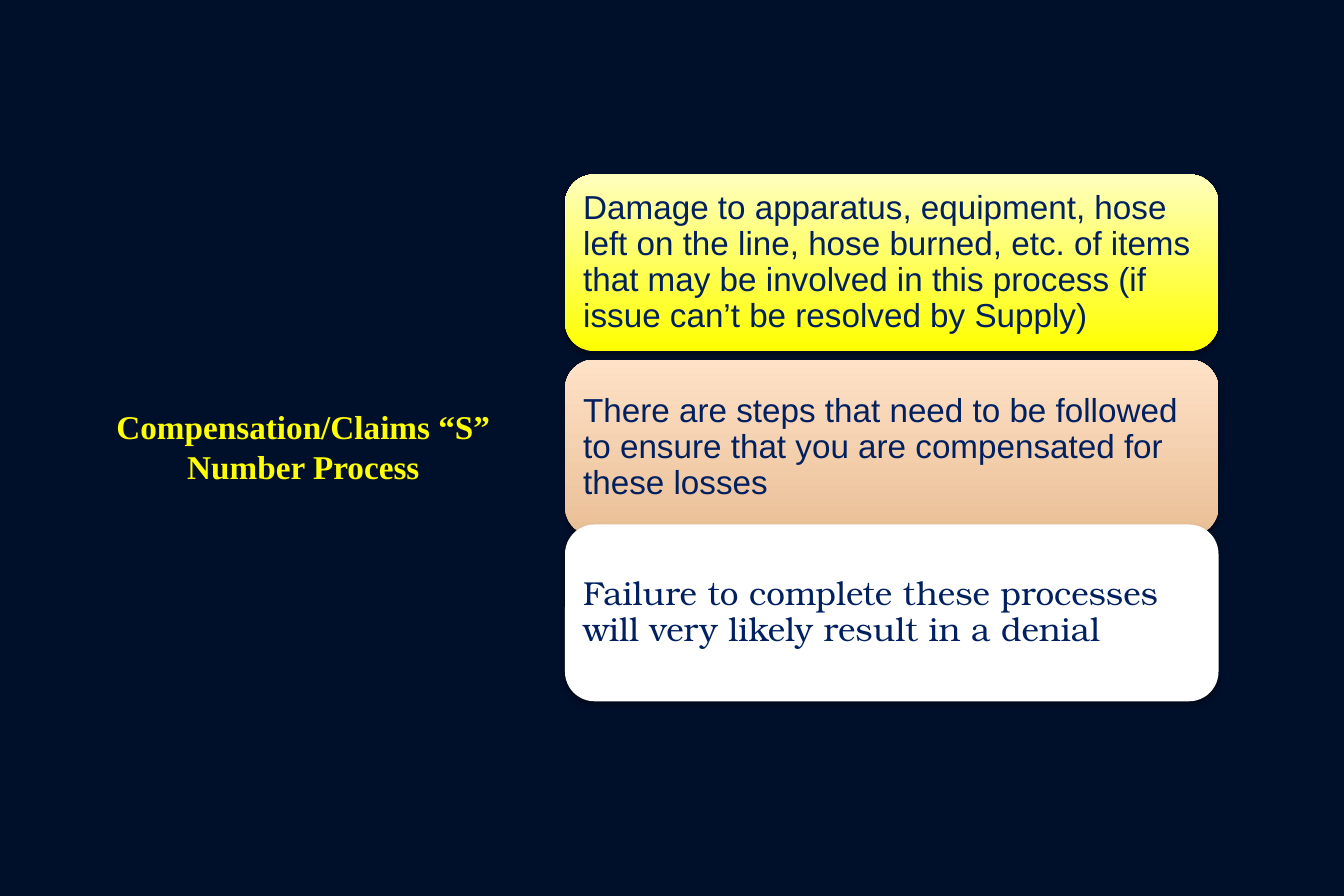
from lxml import etree
from pptx import Presentation
from pptx.dml.color import RGBColor
from pptx.enum import shapes, text
from pptx.oxml.ns import qn
from pptx.util import Pt

COLOURS = {
    "background": "000F2A",
    "title": "FFFF00",
    "body": "002060",
    "yellow": "FFFF00",
    "pale yellow": "FFFFBD",
    "tan": "E9BF96",
    "peach": "FFE1C7",
    "white": "FFFFFF",
    "shadow": "000000",
}
TITLE = "Compensation/Claims “S” Number Process"
# Text, font, top, fill colours from bottom to top
CARDS = [
    ("Damage to apparatus, equipment, hose left on the line, hose burned, etc. "
     "of items that may be involved in this process (if issue can’t be resolved by Supply)",
     "Arial", 105.12, ["yellow", "pale yellow"]),
    ("There are steps that need to be followed to ensure that you are "
     "compensated for these losses",
     "Arial", 216.72, ["tan", "peach"]),
    ("Failure to complete these processes will very likely result in a denial",
     "TeX Gyre Bonum", 316.08, ["white"]),
]
CARD_LEFT, CARD_WIDTH, CARD_HEIGHT = 340.56, 393.84, 106.56
CARD_INSET = 5.76
TEXT_SIZE = 20


def colour(name):
    return RGBColor.from_string(COLOURS[name])


def write(shape, words, font_name, colour_name, alignment, bold=False):
    frame = shape.text_frame
    frame.word_wrap = True
    frame.vertical_anchor = text.MSO_ANCHOR.MIDDLE
    frame.text = words
    paragraph = frame.paragraphs[0]
    paragraph.alignment = alignment
    font = paragraph.runs[0].font
    font.name, font.size, font.bold = font_name, Pt(TEXT_SIZE), bold
    font.color.rgb = colour(colour_name)


def paint(shape, names):
    """Fill with one colour, or with a gradient rising from the first to the second."""
    if len(names) == 1:
        shape.fill.solid()
        shape.fill.fore_color.rgb = colour(names[0])
        return
    shape.fill.gradient()
    shape.fill.gradient_angle = 90
    for stop, name in zip(shape.fill.gradient_stops, names):
        stop.color.rgb = colour(name)


def add_soft_shadow(shape):
    shape.shadow.inherit = False
    effects = shape._element.spPr.find(qn("a:effectLst"))
    shadow = etree.SubElement(effects, qn("a:outerShdw"), blurRad=str(Pt(3.1)),
                              dist=str(Pt(1.8)), dir="5400000", rotWithShape="0")
    tint = etree.SubElement(shadow, qn("a:srgbClr"), val=COLOURS["shadow"])
    etree.SubElement(tint, qn("a:alpha"), val="35000")


def add_card(slide, words, font_name, top, fill_names):
    card = slide.shapes.add_shape(shapes.MSO_SHAPE.ROUNDED_RECTANGLE, Pt(CARD_LEFT),
                                  Pt(top), Pt(CARD_WIDTH), Pt(CARD_HEIGHT))
    paint(card, fill_names)
    card.line.fill.background()
    add_soft_shadow(card)
    write(card, words, font_name, "body", text.PP_ALIGN.LEFT)
    frame = card.text_frame
    frame.margin_left = frame.margin_right = Pt(CARD_INSET)
    frame.margin_top = frame.margin_bottom = Pt(CARD_INSET)
    frame.paragraphs[0].line_spacing = 0.9


def main():
    presentation = Presentation()
    presentation.slide_width, presentation.slide_height = Pt(810), Pt(540)
    slide = presentation.slides.add_slide(presentation.slide_layouts[6])
    slide.background.fill.solid()
    slide.background.fill.fore_color.rgb = colour("background")

    title = slide.shapes.add_textbox(Pt(37.44), Pt(48.24), Pt(290.88), Pt(441.36))
    write(title, TITLE, "Times New Roman", "title", text.PP_ALIGN.CENTER, bold=True)
    for card in CARDS:
        add_card(slide, *card)
    presentation.save("out.pptx")


if __name__ == "__main__":
    main()
